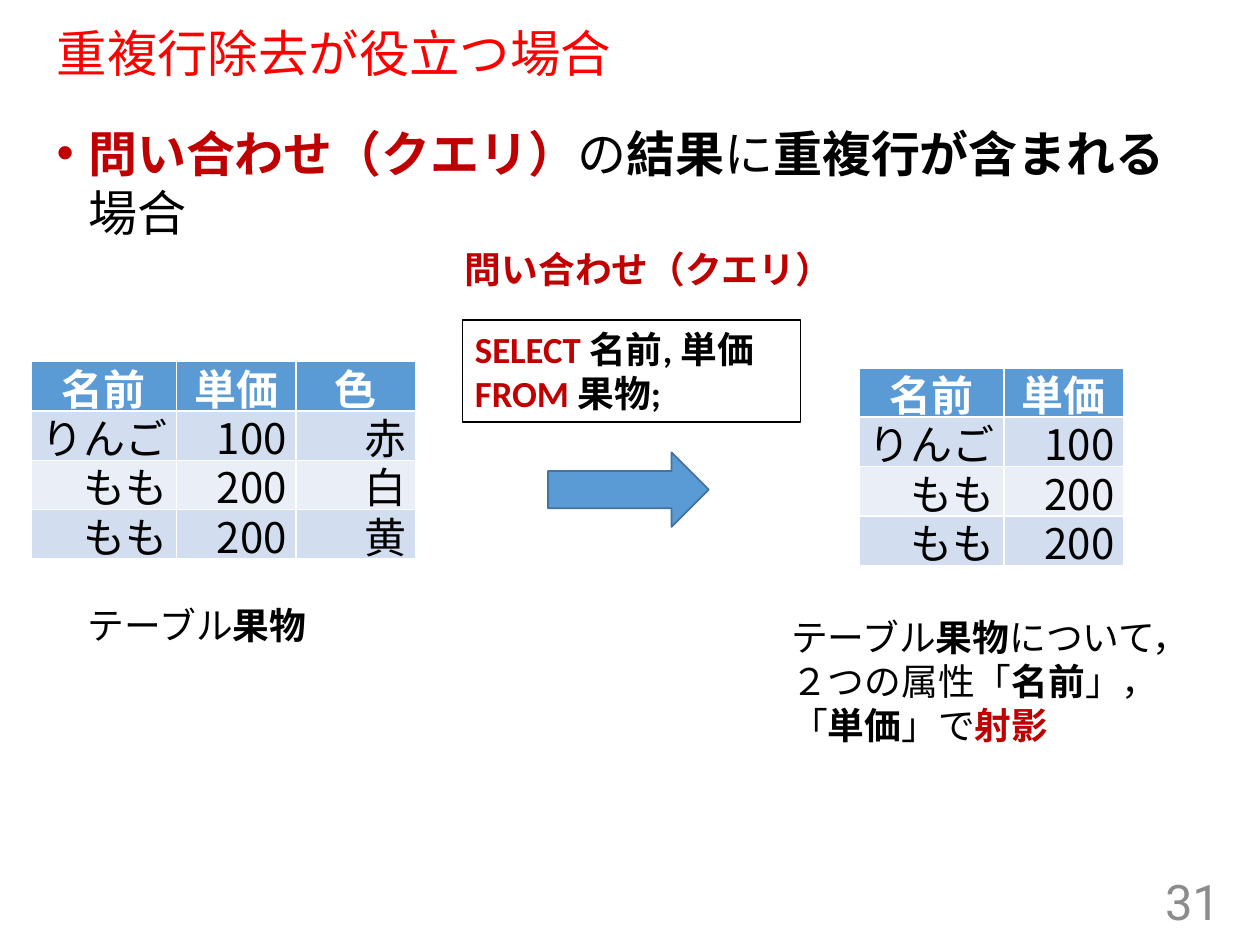
from pptx import Presentation
from pptx.dml.color import RGBColor
from pptx.enum.shapes import MSO_SHAPE
from pptx.enum.text import MSO_ANCHOR, MSO_AUTO_SIZE, PP_ALIGN
from pptx.util import Pt

LEFT, CENTER, RIGHT = PP_ALIGN.LEFT, PP_ALIGN.CENTER, PP_ALIGN.RIGHT
MIDDLE, TOP = MSO_ANCHOR.MIDDLE, MSO_ANCHOR.TOP
NO_AUTOSIZE = MSO_AUTO_SIZE.NONE
RECTANGLE, RIGHT_ARROW = MSO_SHAPE.RECTANGLE, MSO_SHAPE.RIGHT_ARROW

BLACK, WHITE, RED, DARK_RED = "000000", "FFFFFF", "FF0000", "C00000"
BLUE, ARROW_EDGE, GRAY = "5B9BD5", "43739E", "8C8C8C"
BANDS = ("D2DEEF", "EAEFF7")
HEADING_FONT, TEXT_FONT, CELL_FONT = "Roboto", "Calibri", "Noto Sans CJK JP"

COLUMN_WIDTHS = (82.8, 68.4, 68.4)
ROW_HEIGHT = 26.6
TABLE_HEIGHT = 113.8
FRUITS = [("名前", "単価", "色"),
          ("りんご", "100", "赤"),
          ("もも", "200", "白"),
          ("もも", "200", "黄")]


def rgb(color):
    return RGBColor.from_string(color)


def points(box):
    return [Pt(length) for length in box]


def style(paragraph, size, font, align=LEFT, color=BLACK, bold=False):
    paragraph.alignment = align
    paragraph.font.size = Pt(size)
    paragraph.font.name = font
    paragraph.font.bold = bold
    paragraph.font.color.rgb = rgb(color)


def write_runs(paragraph, pieces):
    """Write (text, colour, bold) pieces as the runs of a paragraph."""
    for words, color, bold in pieces:
        run = paragraph.add_run()
        run.text = words
        run.font.bold = bold
        run.font.color.rgb = rgb(color)


def place(placeholder, box, anchor):
    placeholder.left, placeholder.top, placeholder.width, placeholder.height = points(box)
    frame = placeholder.text_frame
    frame.auto_size = NO_AUTOSIZE
    frame.vertical_anchor = anchor
    return frame.paragraphs[0]


def add_heading(slide, box):
    heading = place(slide.shapes.title, box, MIDDLE)
    heading.text = "重複行除去が役立つ場合"
    heading.line_spacing = 0.9
    style(heading, 28.8, HEADING_FONT, color=RED)


def add_summary(slide, box):
    summary = place(slide.placeholders[1], box, TOP)
    style(summary, 28, HEADING_FONT)
    summary.space_before = Pt(10)
    properties = summary._p.get_or_add_pPr()
    properties.set("marL", str(Pt(18)))
    properties.set("indent", str(Pt(-18)))
    write_runs(summary, [("問い合わせ（クエリ）", DARK_RED, True),
                         ("の", BLACK, False), ("結果", BLACK, True),
                         ("に", BLACK, False), ("重複行が含まれる", BLACK, True),
                         ("場合", BLACK, False)])


def fill_text(frame, lines, size=21, font=TEXT_FONT, align=LEFT):
    frame.word_wrap = True
    for index, pieces in enumerate(lines):
        paragraph = frame.add_paragraph() if index else frame.paragraphs[0]
        style(paragraph, size, font, align)
        write_runs(paragraph, pieces)


def add_label(slide, box, lines):
    label = slide.shapes.add_textbox(*points(box))
    fill_text(label.text_frame, lines)


def add_page_number(slide, box):
    number = slide.shapes.add_textbox(*points(box))
    number.text_frame.vertical_anchor = MIDDLE
    fill_text(number.text_frame, [[("31", GRAY, False)]], 28, HEADING_FONT, RIGHT)


def add_table(slide, left, top, records, header_height):
    widths = COLUMN_WIDTHS[:len(records[0])]
    holder = slide.shapes.add_table(
        len(records), len(widths), *points((left, top, sum(widths), TABLE_HEIGHT)))
    table = holder.table
    for column, width in zip(table.columns, widths):
        column.width = Pt(width)
    for index, record in enumerate(records):
        header = index == 0
        table.rows[index].height = Pt(header_height if header else ROW_HEIGHT)
        for cell, value in zip(table.rows[index].cells, record):
            cell.margin_left = cell.margin_right = Pt(5.3)
            cell.margin_top = cell.margin_bottom = Pt(2.6)
            cell.fill.solid()
            cell.fill.fore_color.rgb = rgb(BLUE if header else BANDS[(index - 1) % 2])
            paragraph = cell.text_frame.paragraphs[0]
            paragraph.text = value
            paragraph.line_spacing = 0.8
            if header:
                style(paragraph, 24, TEXT_FONT, CENTER, WHITE, True)
            else:
                style(paragraph, 24, CELL_FONT, RIGHT)
    holder.height = Pt(TABLE_HEIGHT)


def add_query(slide, left, top):
    """Place the query's label, its SQL and the arrow to the result."""
    add_label(slide, (left, top, 236.2, 32.4),
              [[("問い合わせ（クエリ）", DARK_RED, True)]])

    sql = slide.shapes.add_shape(RECTANGLE, *points((left + 5.8, top + 45.4, 193, 58.3)))
    sql.shadow.inherit = False
    sql.fill.background()
    sql.line.color.rgb = rgb(BLACK)
    sql.line.width = Pt(0.75)
    sql.text_frame.vertical_anchor = TOP
    fill_text(sql.text_frame,
              [[("SELECT ", DARK_RED, True), ("名前, 単価", BLACK, True)],
               [("FROM ", DARK_RED, True), ("果物;", BLACK, True)]])

    arrow = slide.shapes.add_shape(RIGHT_ARROW, *points((left + 54.7, top + 121, 91.8, 42.6)))
    arrow.shadow.inherit = False
    arrow.fill.solid()
    arrow.fill.fore_color.rgb = rgb(BLUE)
    arrow.line.color.rgb = rgb(ARROW_EDGE)
    arrow.line.width = Pt(1)


def add_source(slide, left, top):
    add_table(slide, left, top, FRUITS, ROW_HEIGHT)
    add_label(slide, (left + 25.2, top + 134, 194.4, 32.4),
              [[("テーブル", BLACK, False), ("果物", BLACK, True)]])


def add_result(slide, left, top):
    projection = [record[:2] for record in FRUITS]
    add_table(slide, left, top, projection, 0)
    add_label(slide, (left - 46, top + 137.5, 252, 83.5),
              [[("テーブル", BLACK, False), ("果物", BLACK, True),
                ("について，", BLACK, False)],
               [("２つの属性「", BLACK, False), ("名前", BLACK, True),
                ("」，「", BLACK, False), ("単価", BLACK, True),
                ("」で", BLACK, False), ("射影", DARK_RED, True)]])


def main():
    deck = Presentation()
    deck.slide_width, deck.slide_height = Pt(720), Pt(540)
    slide = deck.slides.add_slide(deck.slide_layouts[1])
    add_heading(slide, (25.2, 13.7, 666, 36.7))
    add_summary(slide, (25.2, 67, 666, 83.5))
    add_page_number(slide, (542.2, 500.4, 162, 28.8))
    add_source(slide, 18, 206.6)
    add_query(slide, 258.5, 137.5)
    add_result(slide, 491, 210.2)
    deck.save("out.pptx")


if __name__ == "__main__":
    main()
